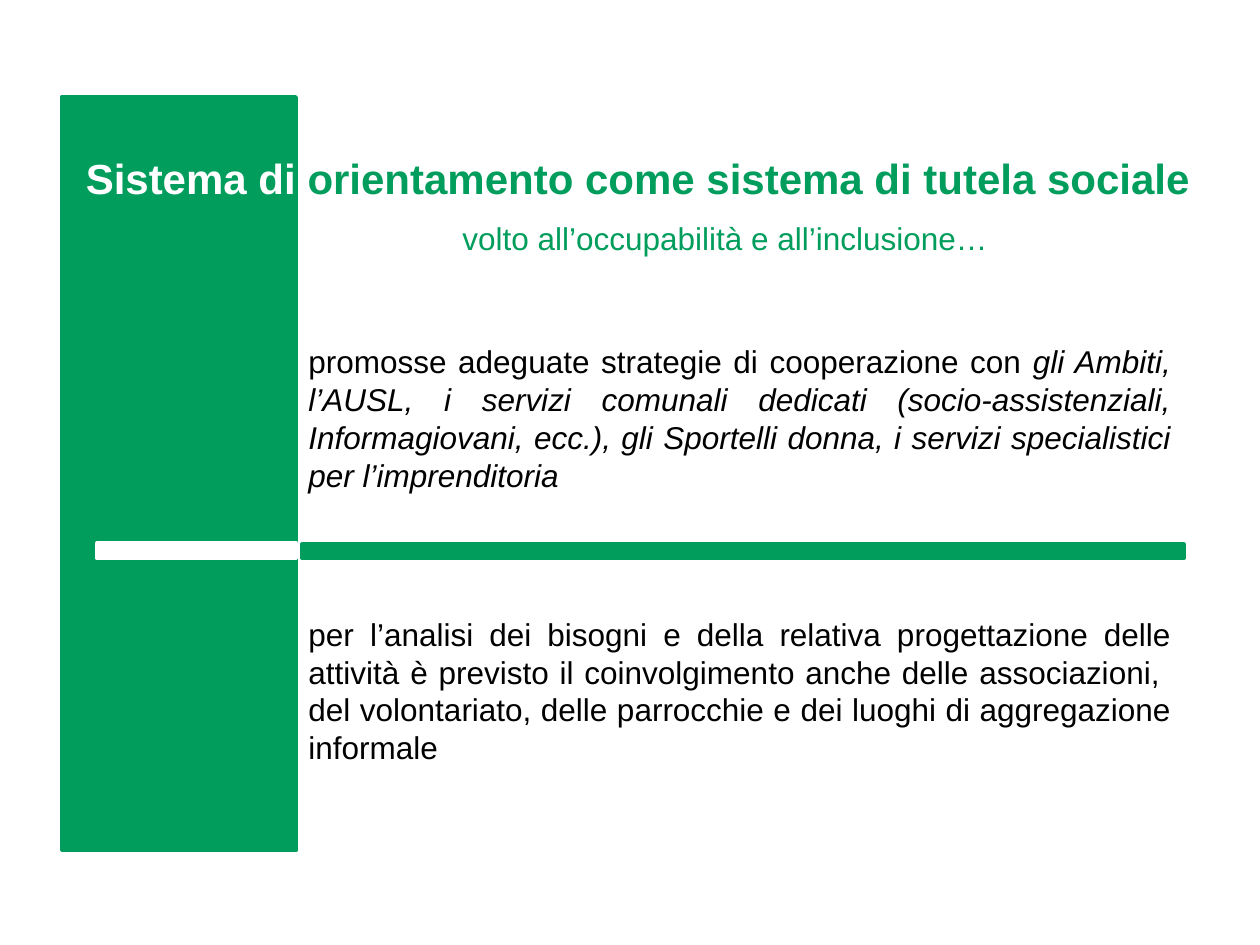
"""Builds a slide on guidance as a system of social protection."""
import pptx
import pptx.dml.color
import pptx.enum.shapes
import pptx.enum.text
import pptx.util

Pt = pptx.util.Pt
ALIGN = pptx.enum.text.PP_ALIGN
GREEN = pptx.dml.color.RGBColor(0x01, 0x9D, 0x5C)
WHITE = pptx.dml.color.RGBColor(0xFF, 0xFF, 0xFF)
BLACK = pptx.dml.color.RGBColor(0x00, 0x00, 0x00)

HEADING = [
    ("Sistema di ", {"color": WHITE}),
    ("orientamento come sistema di tutela sociale", {"color": GREEN}),
]
SUBHEADING = [("volto all’occupabilità e all’inclusione…", {"color": GREEN})]
COOPERATION = [
    ("promosse adeguate strategie di cooperazione con ", {}),
    ("gli Ambiti, l’AUSL, i servizi comunali dedicati (socio-assistenziali, "
     "Informagiovani, ecc.), gli Sportelli donna, i servizi specialistici "
     "per l’imprenditoria", {"italic": True}),
]
INVOLVEMENT = [
    ("per l’analisi dei bisogni e della relativa progettazione delle attività "
     "è previsto il coinvolgimento anche delle associazioni,  del volontariato, "
     "delle parrocchie e dei luoghi di aggregazione informale", {}),
]

BANDS = [
    ((35.2, 55.4, 134, 430.6), GREEN),
    ((55.4, 310.4, 114, 8.8), WHITE),
    ((172.6, 311, 504, 8), GREEN),
]
TEXTS = [
    (SUBHEADING, (172.8, 121.7, 483, 29), ALIGN.CENTER),
    (COOPERATION, (169.2, 192.2, 507, 94.5), ALIGN.JUSTIFY),
    (INVOLVEMENT, (169.2, 347.8, 507, 94.5), ALIGN.JUSTIFY),
]
HEADING_BOX = (41.8, 83.5, 678.2, 36)


def write(holder, runs, size=18, bold=False, align=ALIGN.LEFT):
    """Fill a text holder with formatted runs in one paragraph."""
    frame = holder.text_frame
    frame.word_wrap = True
    frame.auto_size = pptx.enum.text.MSO_AUTO_SIZE.NONE
    frame.vertical_anchor = pptx.enum.text.MSO_ANCHOR.TOP
    paragraph = frame.paragraphs[0]
    paragraph.alignment = align
    for words, style in runs:
        run = paragraph.add_run()
        run.text = words
        run.font.name = "Arial"
        run.font.size = Pt(size)
        run.font.bold = bold
        run.font.italic = style.get("italic", False)
        run.font.color.rgb = style.get("color", BLACK)


def add_band(slide, box, color):
    """Add a solid rectangle with an outline of the same colour."""
    band = slide.shapes.add_shape(
        pptx.enum.shapes.MSO_SHAPE.RECTANGLE, *map(Pt, box))
    band.shadow.inherit = False
    band.fill.solid()
    band.fill.fore_color.rgb = color
    band.line.color.rgb = color
    band.line.width = Pt(2)


def main():
    """Build and save the slide."""
    deck = pptx.Presentation()
    deck.slide_width, deck.slide_height = Pt(720), Pt(540)
    slide = deck.slides.add_slide(deck.slide_layouts[5])

    for box, color in BANDS:
        add_band(slide, box, color)

    heading = slide.shapes.title
    heading.left, heading.top, heading.width, heading.height = map(Pt, HEADING_BOX)
    write(heading, HEADING, size=24, bold=True)
    heading.element.getparent().append(heading.element)

    for runs, box, align in TEXTS:
        write(slide.shapes.add_textbox(*map(Pt, box)), runs, align=align)

    deck.save("out.pptx")


if __name__ == "__main__":
    main()
